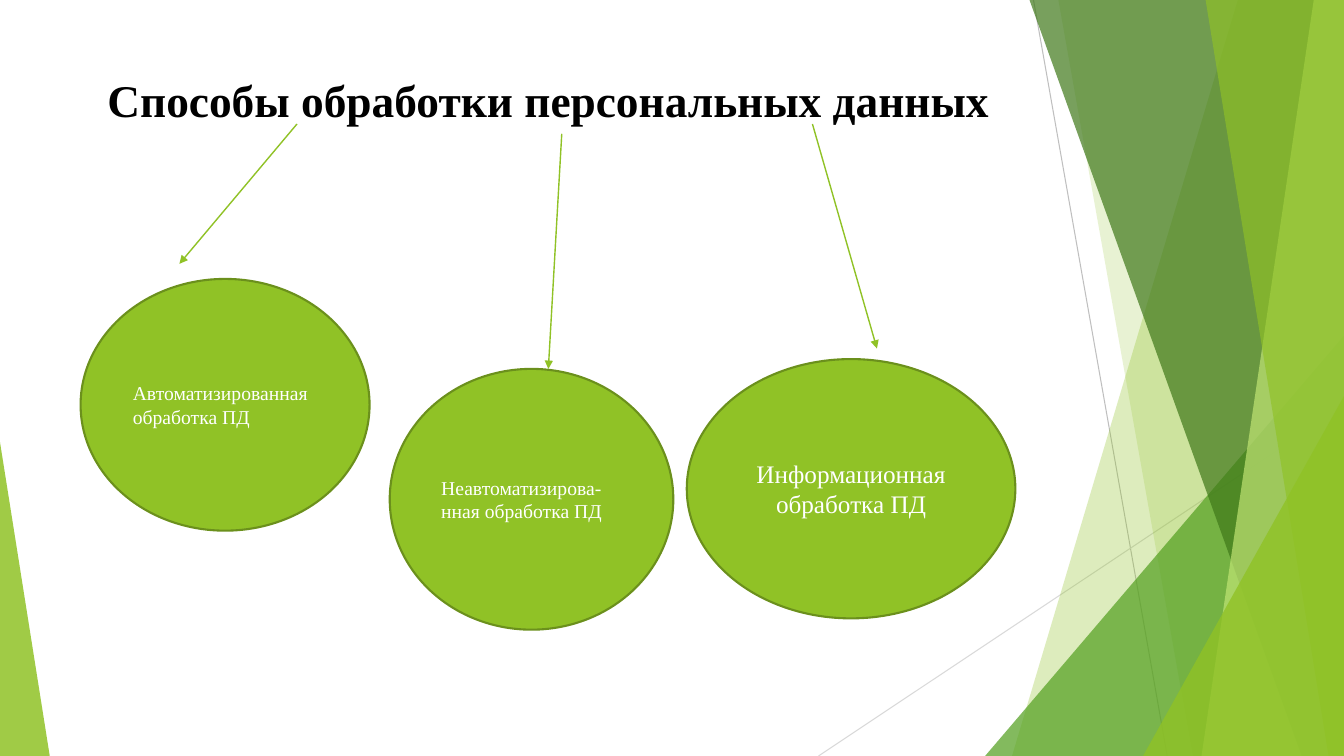
import lxml.etree
import pptx
import pptx.dml.color
import pptx.enum.shapes
import pptx.enum.text
import pptx.oxml.ns
import pptx.util

KIND = pptx.enum.shapes.MSO_SHAPE
ALIGN = pptx.enum.text.PP_ALIGN
ANCHOR = pptx.enum.text.MSO_ANCHOR
GREEN, DARK, WHITE, BLACK = "90C226", "6B901C", "FFFFFF", "000000"


def rgb(code):
    return pptx.dml.color.RGBColor.from_string(code)


def put(item, form):
    for name, value in form.items():
        setattr(item, name, value)


def add(node, tag, **attrs):
    return lxml.etree.SubElement(node, pptx.oxml.ns.qn(tag), **attrs)


class Deck:
    """Draws styled elements on one slide, with lengths in percent of its size."""

    font = "Times New Roman"

    def __init__(self):
        self.show = pptx.Presentation()
        put(self.show, {"slide_width": pptx.util.Inches(13.33),
                        "slide_height": pptx.util.Inches(7.5)})
        self.slide = self.show.slides.add_slide(self.show.slide_layouts[5])
        self.shapes = self.slide.shapes

    def spot(self, x, y):
        return (round(self.show.slide_width * x / 100),
                round(self.show.slide_height * y / 100))

    def box(self, x, y, w, h):
        return *self.spot(x, y), *self.spot(w, h)

    def paint(self, shape, color, alpha=100):
        shape.shadow.inherit = False
        shape.fill.solid()
        shape.fill.fore_color.rgb = rgb(color)
        shape.line.fill.background()
        if alpha < 100:
            fill = shape.element.spPr.find(pptx.oxml.ns.qn("a:solidFill"))
            add(fill[0], "a:alpha", val=str(alpha * 1000))

    def label(self, shape, text, size, color, align, anchor, bold=False):
        frame = shape.text_frame
        put(frame, {"word_wrap": True, "vertical_anchor": anchor,
                    "auto_size": pptx.enum.text.MSO_AUTO_SIZE.NONE})
        frame.text = text
        para = frame.paragraphs[0]
        para.alignment = align
        font = para.runs[0].font
        put(font, {"name": self.font, "size": pptx.util.Pt(size), "bold": bold})
        font.color.rgb = rgb(color)

    def title(self, text, area, size):
        shape = self.shapes.title
        put(shape, dict(zip(("left", "top", "width", "height"), self.box(*area))))
        self.label(shape, text, size, BLACK, ALIGN.CENTER, ANCHOR.TOP, True)
        self.shapes.element.append(shape.element)

    def line(self, start, end, color, width, arrow=False):
        kind = pptx.enum.shapes.MSO_CONNECTOR.STRAIGHT
        link = self.shapes.add_connector(kind, *self.spot(*start), *self.spot(*end))
        link.line.color.rgb = rgb(color)
        link.line.width = pptx.util.Pt(width)
        if arrow:
            edge = link.element.spPr.find(pptx.oxml.ns.qn("a:ln"))
            add(edge, "a:tailEnd", type="triangle")
        add(link.element.spPr, "a:effectLst")

    def band(self, top, base, color, alpha):
        form = self.shapes.build_freeform(*self.spot(top, 0))
        form.add_line_segments([self.spot(*p) for p in
                                ((100, 0), (100, 100), (base, 100))])
        self.paint(form.convert_to_shape(), color, alpha)

    def wedge(self, area, peak, color, alpha):
        shape = self.shapes.add_shape(KIND.ISOSCELES_TRIANGLE, *self.box(*area))
        shape.adjustments[0] = peak
        self.paint(shape, color, alpha)

    def oval(self, area, text, size, align):
        shape = self.shapes.add_shape(KIND.OVAL, *self.box(*area))
        self.paint(shape, GREEN)
        shape.line.color.rgb = rgb(DARK)
        shape.line.width = pptx.util.Pt(1.5)
        self.label(shape, text, size, WHITE, align, ANCHOR.MIDDLE)


def main():
    deck = Deck()
    deck.line((76.9, 0), (86.85, 100), "BFBFBF", 0.75)
    deck.line((100, 53.7), (60.9, 100), "D9D9D9", 0.75)
    deck.band(92.1, 75.3, GREEN, 30)
    deck.band(78.75, 88.75, GREEN, 20)
    deck.wedge((73.3, 44.4, 26.7, 55.6), 1, "54A021", 72)
    deck.band(76.6, 96.85, "3F7819", 70)
    deck.band(97.75, 89.4, "C0E474", 70)
    deck.band(89.7, 98.85, GREEN, 65)
    deck.wedge((85.05, 52.4, 14.95, 47.6), 1, GREEN, 80)
    deck.wedge((0, 58.5, 3.7, 41.5), 0, GREEN, 85)
    deck.title("Способы обработки персональных данных",
               (5.55, 8.93, 70.5, 14.93), 32.4)
    ways = (
        ((22.1, 16.4), (13.35, 34.9), (6, 36.9, 21.5, 33.3),
         "Автоматизированная обработка ПД", 14, ALIGN.JUSTIFY),
        ((41.8, 17.7), (40.8, 48.8), (29, 48.8, 21.1, 34.5),
         "Неавтоматизирова-нная обработка ПД", 14, ALIGN.JUSTIFY),
        ((60.45, 16.4), (65.25, 46.1), (51.1, 47.5, 24.45, 34.3),
         "Информационная обработка ПД", 18, ALIGN.CENTER),
    )
    for start, end, area, text, size, align in ways:
        deck.line(start, end, GREEN, 1, True)
        deck.oval(area, text, size, align)
    deck.show.save("out.pptx")


if __name__ == "__main__":
    main()
